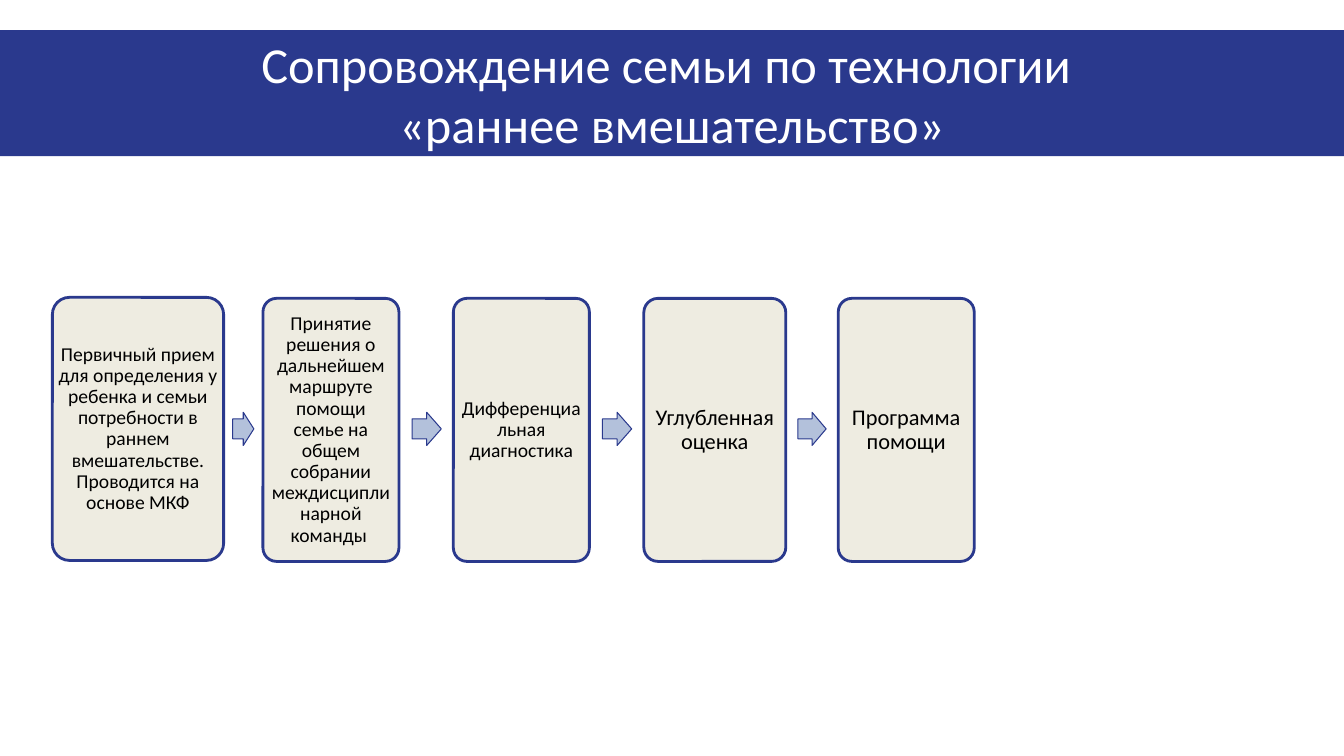
from pptx import Presentation
from pptx.dml.color import RGBColor
from pptx.enum.shapes import MSO_SHAPE as Shape
from pptx.enum.text import MSO_ANCHOR as Anchor, PP_ALIGN as Align
from pptx.util import Emu, Pt

SCALE = 9144  # EMU in one px, 100 px to the inch
NAVY = RGBColor(0x2A, 0x39, 0x8D)
CREAM = RGBColor(0xEE, 0xEC, 0xE1)
STEEL = RGBColor(0xB3, 0xC1, 0xDB)
WHITE = RGBColor(0xFF, 0xFF, 0xFF)
BLACK = RGBColor(0, 0, 0)
FONT = "Calibri"

TITLE = ["Сопровождение семьи по технологии ", "«раннее вмешательство»"]
# left, top, width, text size, text
STEPS = [
    (52, 295, 170, 14, "Первичный прием для определения у ребенка и семьи "
     "потребности в раннем вмешательстве. Проводится на основе МКФ"),
    (261, 296, 135, 14, "Принятие решения о дальнейшем маршруте помощи семье "
     "на общем собрании междисциплинарной команды "),
    (450, 296, 135, 14, "Дифференциальная диагностика"),
    (639, 296, 141, 16, "Углубленная оценка"),
    (832, 296, 135, 16, "Программа помощи"),
]
STEP_H = 261


def px(n):
    return Emu(round(n) * SCALE)


def add_form(slide, kind, box, fill, line=None):
    form = slide.shapes.add_shape(kind, *map(px, box))
    form.shadow.inherit = False
    form.fill.solid()
    form.fill.fore_color.rgb = fill
    if line:
        form.line.color.rgb = NAVY
        form.line.width = Pt(line)
    else:
        form.line.fill.background()
    return form


def add_text(form, lines, size, color, side, edge, space=None):
    frame = form.text_frame
    frame.word_wrap = True
    frame.vertical_anchor = Anchor.MIDDLE
    frame.margin_left = frame.margin_right = px(side)
    frame.margin_top = frame.margin_bottom = px(edge)
    para = frame.paragraphs[0]
    para.alignment = Align.CENTER
    if space:
        para.line_spacing = space
    for i, line in enumerate(lines):
        if i:
            para.add_line_break()
        run = para.add_run()
        run.text = line
        run.font.name = FONT
        run.font.size = Pt(size)
        run.font.color.rgb = color


def add_step(slide, left, top, width, size, text):
    card = add_form(slide, Shape.ROUNDED_RECTANGLE,
                    (left, top, width, STEP_H), CREAM, 2)
    card.adjustments[0] = 0.1
    # The round corners already inset the text by about 3% of the width
    pad = (7 if size > 14 else 6) - round(0.03 * width)
    add_text(card, [text], size, BLACK, pad, pad, 0.9)


def add_arrow(slide, start, end):
    gap = end - start
    arrow = add_form(slide, Shape.RIGHT_ARROW,
                     (start + 0.24 * gap, 409, 0.54 * gap, 33), STEEL, 0.75)
    arrow.adjustments[0] = 0.6
    arrow.adjustments[1] = 0.5


def main():
    deck = Presentation()
    deck.slide_width, deck.slide_height = px(1334), px(750)
    slide = deck.slides.add_slide(deck.slide_layouts[6])

    # Title band
    band = add_form(slide, Shape.RECTANGLE, (0, 30, 1334, 125), NAVY)
    add_text(band, TITLE, 36, WHITE, 12, 6)

    # Steps of the process
    for step in STEPS:
        add_step(slide, *step)

    # Arrows in the gaps between steps
    for step, after in zip(STEPS, STEPS[1:]):
        add_arrow(slide, step[0] + step[2], after[0])

    deck.save("out.pptx")


if __name__ == "__main__":
    main()
